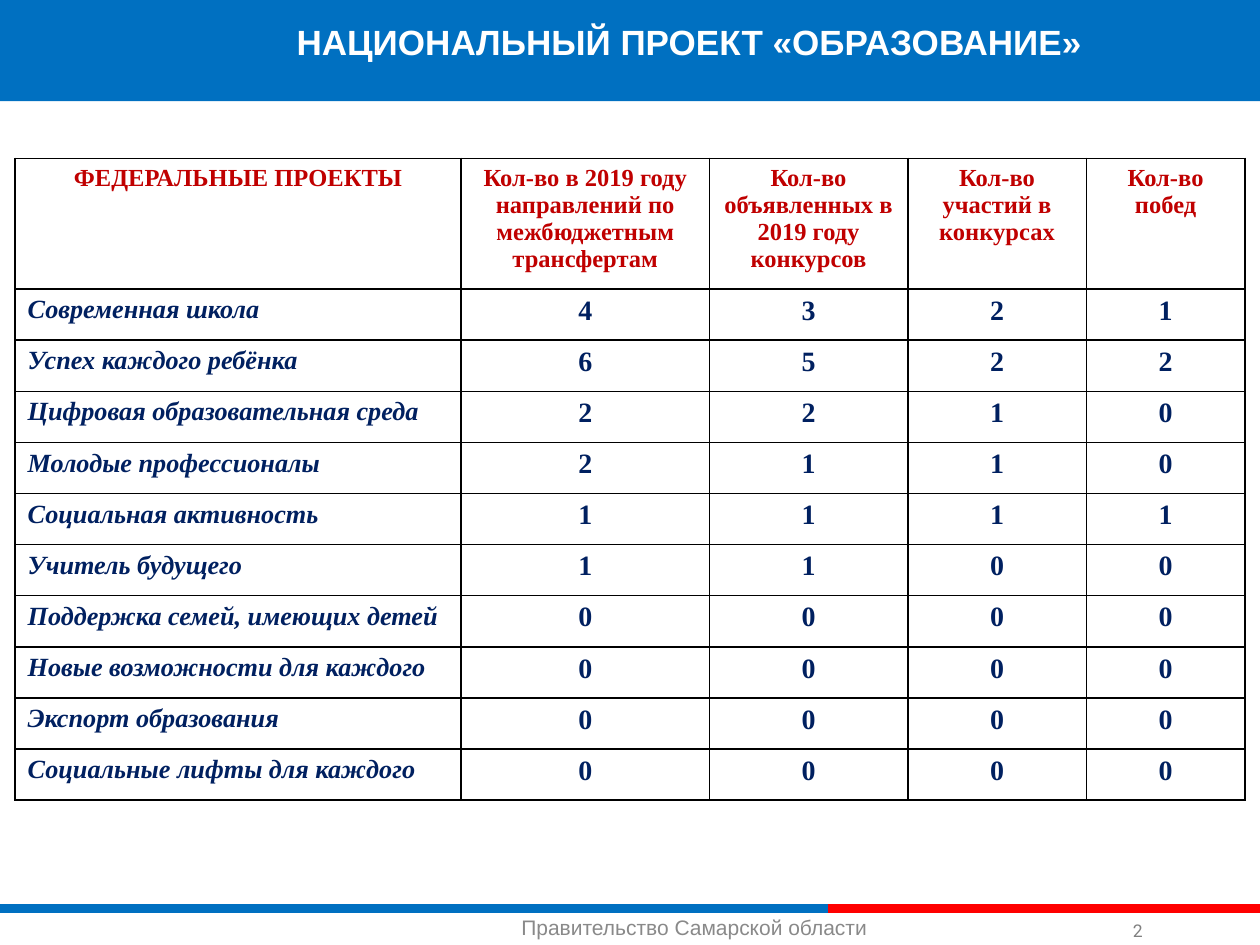
"""Build the slide on the national project "Education"."""
from lxml.etree import SubElement as Sub
from pptx import Presentation
from pptx.dml.color import RGBColor as RGB
from pptx.enum.shapes import MSO_CONNECTOR as Link, MSO_SHAPE as Shape
from pptx.enum.text import MSO_ANCHOR as Anchor, PP_ALIGN as Align
from pptx.oxml.ns import qn
from pptx.util import Pt

INK = {"blue": "0070C1", "red": "FF0000", "white": "FFFFFF", "foot": "898989",
       "page": "808080", "head": "C00000", "navy": "002060", "rule": "000000"}
SERIF = "Times New Roman"


def write(frame, text, size, font, ink, align=Align.CENTER, bold=False, slant=False):
    para = frame.paragraphs[0]
    para.alignment = align
    run = para.add_run()
    run.text = text
    face = run.font
    face.size, face.name, face.bold, face.italic = Pt(size), font, bold, slant
    face.color.rgb = RGB.from_string(INK[ink])


def label(left, top, width, height, wrap=True):
    frame = slide.shapes.add_textbox(Pt(left), Pt(top), Pt(width), Pt(height)).text_frame
    frame.word_wrap = wrap
    frame.margin_left = frame.margin_right = Pt(3.6)
    frame.margin_top = frame.margin_bottom = Pt(3.6)
    return frame


deck = Presentation()
deck.slide_width, deck.slide_height = Pt(720), Pt(540)
slide = deck.slides.add_slide(deck.slide_layouts[6])

band = slide.shapes.add_shape(Shape.RECTANGLE, Pt(0), Pt(-2.2), Pt(720), Pt(60))
band.shadow.inherit = False
band.fill.solid()
band.fill.fore_color.rgb = RGB.from_string(INK["blue"])
band.line.fill.background()

for start, end, ink in [(0, 473, "blue"), (473, 720, "red")]:
    line = slide.shapes.add_connector(Link.STRAIGHT, Pt(start), Pt(519.3), Pt(end), Pt(519.3))
    line.line.width = Pt(5)
    line.line.color.rgb = RGB.from_string(INK[ink])
    Sub(line._element.spPr, qn("a:effectLst"))

write(label(161.3, 519.3, 471, 21), "Правительство Самарской области", 12, "Arial", "foot")
page = label(643.7, 523.4, 13.7, 18, wrap=False)
page.vertical_anchor = Anchor.BOTTOM
write(page, "2", 10, "Roboto", "page", Align.LEFT)

heads = ["ФЕДЕРАЛЬНЫЕ ПРОЕКТЫ",
         "Кол-во в 2019 году направлений по межбюджетным трансфертам",
         "Кол-во объявленных в 2019 году конкурсов",
         "Кол-во участий в конкурсах", "Кол-во побед"]
rows = [("Современная школа", 4, 3, 2, 1),
        ("Успех каждого ребёнка", 6, 5, 2, 2),
        ("Цифровая образовательная среда", 2, 2, 1, 0),
        ("Молодые профессионалы", 2, 1, 1, 0),
        ("Социальная активность", 1, 1, 1, 1),
        ("Учитель будущего", 1, 1, 0, 0),
        ("Поддержка семей, имеющих детей", 0, 0, 0, 0),
        ("Новые возможности для каждого", 0, 0, 0, 0),
        ("Экспорт образования", 0, 0, 0, 0),
        ("Социальные лифты для каждого", 0, 0, 0, 0)]
wide = [255, 141.8, 113.4, 102, 90.7]

grid = slide.shapes.add_table(len(rows) + 1, len(wide), Pt(8.6), Pt(90.5),
                              Pt(sum(wide)), Pt(366.7)).table
grid.first_row = grid.horz_banding = False
for col, width in zip(grid.columns, wide):
    col.width = Pt(width)
for i, row in enumerate([heads, *rows]):
    grid.rows[i].height = Pt(29.2 if i else 74.7)
    for j, text in enumerate(row):
        cell = grid.cell(i, j)
        if i == 0:
            write(cell.text_frame, text, 14, SERIF, "head", bold=True)
        elif j == 0:
            write(cell.text_frame, text, 15, SERIF, "navy", Align.LEFT, True, True)
        else:
            write(cell.text_frame, str(text), 16, SERIF, "navy", bold=True)
        props = cell._tc.get_or_add_tcPr()
        for side in ("lnL", "lnR", "lnT", "lnB"):
            edge = Sub(props, qn("a:" + side), w=str(Pt(1)))
            Sub(Sub(edge, qn("a:solidFill")), qn("a:srgbClr"), val=INK["rule"])
        cell.fill.background()

write(label(67.7, 7.9, 652.3, 31.5), "НАЦИОНАЛЬНЫЙ ПРОЕКТ «ОБРАЗОВАНИЕ»",
      20, "Arial", "white", bold=True)

deck.save("out.pptx")
